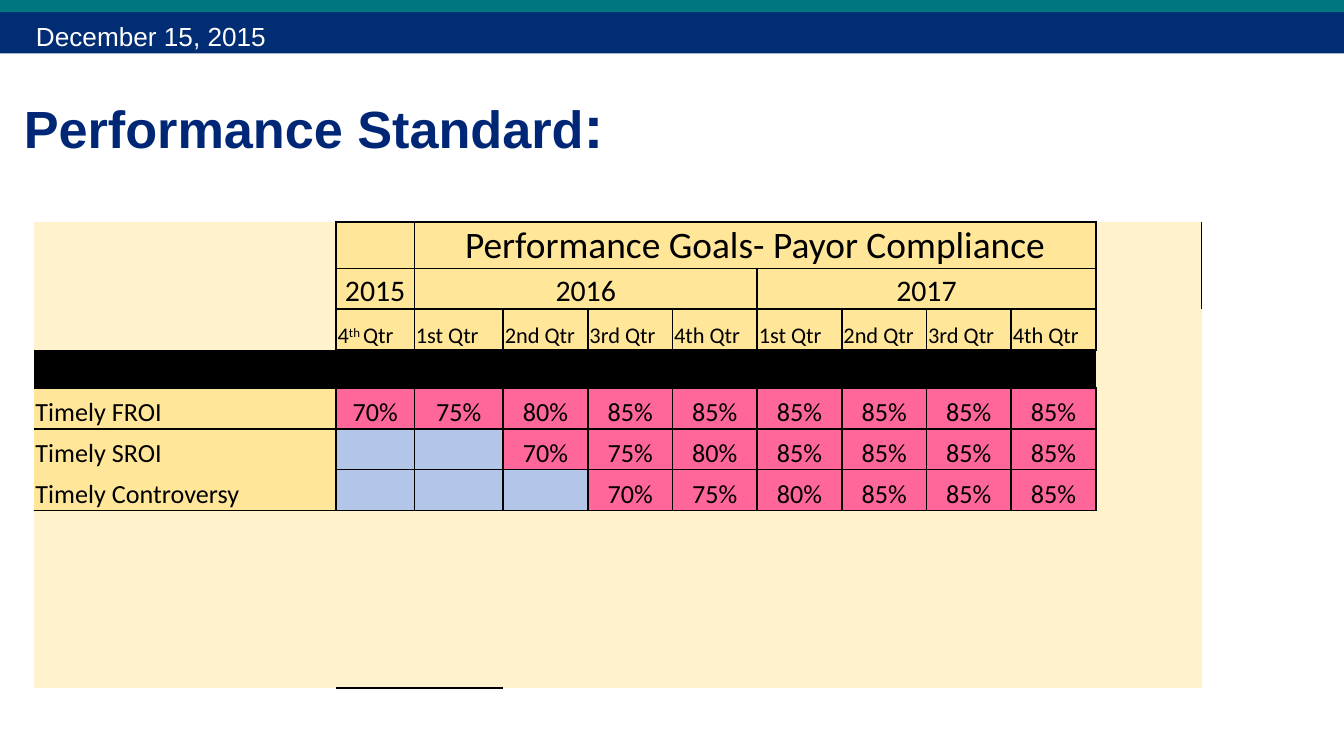
from lxml import etree
from pptx import Presentation
from pptx.dml.color import RGBColor
from pptx.enum.shapes import MSO_SHAPE as Shape
from pptx.enum.text import MSO_ANCHOR as Anchor, PP_ALIGN as Align
from pptx.oxml.ns import qn
from pptx.util import Cm, Pt

NAVY = RGBColor(0x00, 0x2D, 0x73)
TEAL = RGBColor(0x00, 0x76, 0x81)
TITLE = RGBColor(0x00, 0x27, 0x76)
WHITE = RGBColor(0xFF, 0xFF, 0xFF)
BLACK = RGBColor(0x00, 0x00, 0x00)
CREAM = RGBColor(0xFF, 0xF2, 0xCC)
GOLD = RGBColor(0xFF, 0xE6, 0x99)
PINK = RGBColor(0xFF, 0x66, 0x99)
BLUE = RGBColor(0xB4, 0xC6, 0xE7)

PLAIN = "{2D5ABB26-0587-4C30-8999-92F81FD0307C}"  # table style without lines
COLS = [5.71, 1.48, 1.68] + [1.6] * 7 + [2]
ROWS = [0.88, 0.77, 0.77, 0.72, 0.77, 0.77, 0.77, 3.36]
LAST = len(COLS) - 1
BAR, FOOT = 3, 7  # black row and empty bottom row

QTRS = ["1st Qtr", "2nd Qtr", "3rd Qtr", "4th Qtr"]
GOALS = {
    "Timely FROI": [70, 75, 80] + [85] * 6,
    "Timely SROI": [None] * 2 + [70, 75, 80] + [85] * 4,
    "Timely Controversy": [None] * 3 + [70, 75, 80] + [85] * 3,
}


def add_run(para, text, raised=False, **form):
    run = para.add_run()
    run.text = text
    color = form.pop("color", BLACK)
    for key, val in form.items():
        setattr(run.font, key, val)
    run.font.color.rgb = color
    if raised:
        run.font._element.set("baseline", "30000")


def add_band(slide, top, high, color):
    band = slide.shapes.add_shape(Shape.RECTANGLE, 0, Cm(top), Cm(25.4), Cm(high))
    band.shadow.inherit = False
    band.fill.solid()
    band.fill.fore_color.rgb = color
    band.line.fill.background()


def add_text(slide, box, runs, inset=0.13):
    frame = slide.shapes.add_textbox(*map(Cm, box)).text_frame
    frame.word_wrap = True
    frame.margin_top = Cm(inset)
    for text, form in runs:
        add_run(frame.paragraphs[0], text, name="Arial", **form)


def find_fill(row, col):
    if row == FOOT or col == LAST or (col == 0 and row < BAR):
        return CREAM
    if row == BAR:
        return BLACK
    return GOLD if row < BAR or col == 0 else BLUE


def find_edges(row, col):
    """Sides of a cell that carry a line."""
    if row in (BAR, FOOT) and col == LAST:
        return ""
    if row == BAR:
        return "B" if col == 0 else "TB"
    if row == FOOT:
        return "TB" if col in (1, 2) else "T"
    if col == LAST:
        return "L"
    if col == 0:
        return {BAR + 1: "RT", FOOT - 1: "RB"}.get(row, "R")
    return "LRTB"


def add_edges(cell, sides):
    props = cell._tc.get_or_add_tcPr()
    for spot, side in enumerate(sides):
        line = etree.Element(qn(f"a:ln{side}"), w=str(Pt(1)))
        fill = etree.SubElement(line, qn("a:solidFill"))
        etree.SubElement(fill, qn("a:srgbClr"), val=str(BLACK))
        props.insert(spot, line)


def style_cell(cell, row, col):
    form = {"margin_left": Cm(0.03), "margin_right": Cm(0.03),
            "margin_top": Cm(0.03), "margin_bottom": 0,
            "vertical_anchor": Anchor.BOTTOM}
    for key, val in form.items():
        setattr(cell, key, val)
    cell.fill.solid()
    cell.fill.fore_color.rgb = find_fill(row, col)
    add_edges(cell, find_edges(row, col))


def fill_cell(cell, text, size, align=Align.CENTER, raised=""):
    para = cell.text_frame.paragraphs[0]
    para.alignment = align
    font = {"name": "Calibri", "size": Pt(size)}
    add_run(para, text, **font)
    if raised:
        add_run(para, raised + " ", raised=True, **font)
        add_run(para, "Qtr", **font)


def add_table(slide):
    shape = slide.shapes.add_table(len(ROWS), len(COLS), Cm(0.64), Cm(4.19),
                                   Cm(sum(COLS)), Cm(sum(ROWS)))
    table = shape.table
    table.first_row = table.horz_banding = False
    table._tbl.tblPr[0].text = PLAIN
    for col, wide in zip(table.columns, COLS):
        col.width = Cm(wide)
    for row, high in zip(table.rows, ROWS):
        row.height = Cm(high)
    for row in range(len(ROWS)):
        for col in range(len(COLS)):
            style_cell(table.cell(row, col), row, col)

    # Heading rows
    for row, left, right in [(0, 2, 9), (1, 2, 5), (1, 6, 9)]:
        table.cell(row, left).merge(table.cell(row, right))
    fill_cell(table.cell(0, 2), "Performance Goals- Payor Compliance", 20)
    for col, year in [(1, "2015"), (2, "2016"), (6, "2017")]:
        fill_cell(table.cell(1, col), year, 16)
    fill_cell(table.cell(2, 1), "4", 12, Align.LEFT, raised="th")
    for col, text in enumerate(QTRS * 2, 2):
        fill_cell(table.cell(2, col), text, 12, Align.LEFT)

    # Goals
    for row, (name, goals) in enumerate(GOALS.items(), BAR + 1):
        fill_cell(table.cell(row, 0), name, 14, Align.LEFT)
        for col, goal in enumerate(goals, 1):
            if goal:
                cell = table.cell(row, col)
                cell.fill.fore_color.rgb = PINK
                fill_cell(cell, f"{goal}%", 14)

    # Small type in empty cells keeps the rows low
    for cell in table.iter_cells():
        para = cell.text_frame.paragraphs[0]
        if not para.runs:
            etree.SubElement(para._p, qn("a:endParaRPr"), sz="1200")


def main():
    deck = Presentation()
    deck.slide_width, deck.slide_height = Cm(25.4), Cm(14.28)
    slide = deck.slides.add_slide(deck.slide_layouts[6])

    # Header
    add_band(slide, 0.18, 0.83, NAVY)
    add_band(slide, 0, 0.23, TEAL)
    head = {"bold": True, "color": TITLE}
    add_text(slide, (0.2, 1.42, 21.9, 2.77),
             [("Performance Standard", {"size": Pt(28), **head}),
              (":", {"size": Pt(32), **head})], inset=0.25)

    # Goals and date
    add_table(slide)
    add_text(slide, (0.43, 0.25, 6.78, 0.76),
             [("December 15, 2015", {"size": Pt(14), "color": WHITE})])
    deck.save("out.pptx")


if __name__ == "__main__":
    main()
